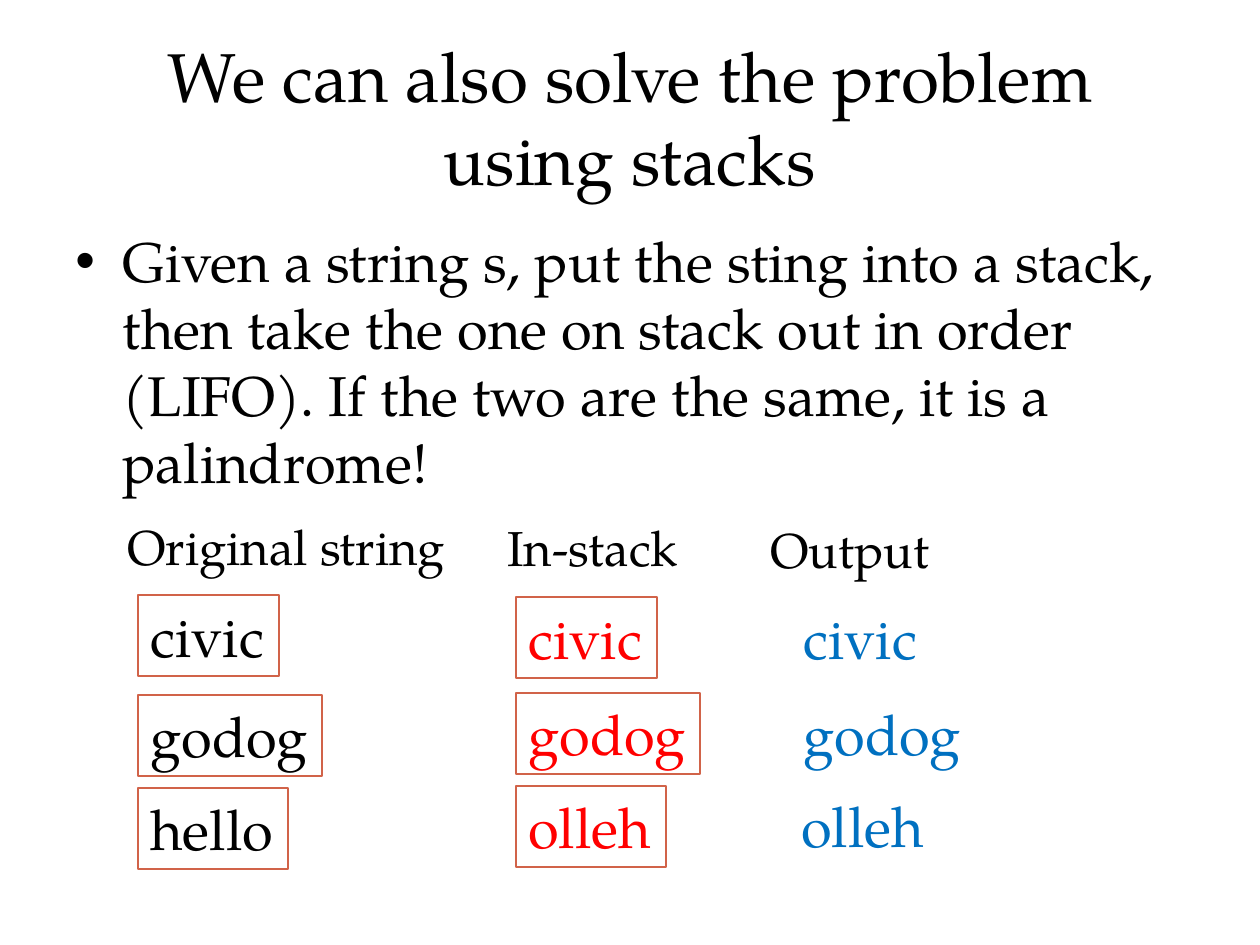
import pptx
import pptx.util
import pptx.dml.color
import pptx.enum.shapes
import pptx.enum.text
import pptx.oxml
import pptx.oxml.ns

RGB = pptx.dml.color.RGBColor
BLACK = RGB(0x00, 0x00, 0x00)
RED = RGB(0xFF, 0x00, 0x00)
BLUE = RGB(0x00, 0x70, 0xC0)
RUST = RGB(0xD1, 0x63, 0x49)
FONT = "TeX Gyre Pagella"
SCALE = 914400 / 126
ALIGN = pptx.enum.text.PP_ALIGN
ANCHOR = pptx.enum.text.MSO_ANCHOR
FIT = pptx.enum.text.MSO_AUTO_SIZE

HEADS = [("Original string", 115, 510, 348), ("In-stack", 495, 511, 199),
         ("Output", 758, 513, 186)]
WORDS = [
    (141, [("civic", 138, 595), ("civic", 516, 597), ("civic", 791, 597)]),
    (184, [("godog", 138, 695), ("godog", 516, 693), ("godog", 791, 693)]),
    (150, [("hello", 138, 788), ("olleh", 516, 786), ("olleh", 789, 785)]),
]
LOOKS = [(BLACK, RUST), (RED, RUST), (BLUE, None)]


def px(count):
    """Turn pixels into EMU."""
    return pptx.util.Emu(round(count * SCALE))


def write(shape, text, size=32, color=BLACK, align=ALIGN.LEFT,
          anchor=ANCHOR.TOP, wrap=True, fit=FIT.NONE):
    """Put one formatted paragraph into a shape and return it."""
    frame = shape.text_frame
    frame.word_wrap = wrap
    frame.auto_size = fit
    frame.vertical_anchor = anchor
    para = frame.paragraphs[0]
    para.alignment = align
    run = para.add_run()
    run.text = text
    run.font.name = FONT
    run.font.size = pptx.util.Pt(size)
    run.font.color.rgb = color
    return para


def title(slide, text):
    """Place and fill the title."""
    shape = slide.shapes.title
    shape.left, shape.top = px(63), px(38)
    shape.width, shape.height = px(1134), px(157)
    write(shape, text, size=39.6, align=ALIGN.CENTER, anchor=ANCHOR.MIDDLE)


def bullet(slide, text):
    """Add the bulleted body text."""
    box = slide.shapes.add_textbox(px(63), px(220), px(1134), px(290))
    para = write(box, text)
    para.space_before = pptx.util.Pt(6.4)
    props = para._p.get_or_add_pPr()
    props.set("marL", str(px(47)))
    props.set("indent", str(px(-47)))
    for tag, key, value in (("a:buFont", "typeface", "Arial"),
                            ("a:buChar", "char", "•")):
        item = pptx.oxml.xmlchemy.OxmlElement(tag)
        item.set(key, value)
        props.append(item)


def label(slide, text, left, top, width, height, line=None, **look):
    """Add a label, framed when a line colour is given."""
    place = px(left), px(top), px(width), px(height)
    if line is None:
        shape = slide.shapes.add_textbox(*place)
    else:
        kind = pptx.enum.shapes.MSO_SHAPE.RECTANGLE
        shape = slide.shapes.add_shape(kind, *place)
        shape.shadow.inherit = False
        shape.fill.background()
        shape.line.color.rgb = line
        shape.line.width = pptx.util.Pt(0.75)
    write(shape, text, wrap=False, fit=FIT.SHAPE_TO_FIT_TEXT, **look)


def main():
    """Build the slide and save it."""
    deck = pptx.Presentation()
    deck.slide_width, deck.slide_height = px(1260), px(945)
    slide = deck.slides.add_slide(deck.slide_layouts[5])
    title(slide, "We can also solve the problem using stacks")
    bullet(slide, "Given a string s, put the sting into a stack, then take "
                  "the one on stack out in order (LIFO). If the two are the "
                  "same, it is a palindrome!")
    for text, left, top, width in HEADS:
        label(slide, text, left, top, width, 72, size=28)
    for width, row in WORDS:
        for (text, left, top), (color, line) in zip(row, LOOKS):
            label(slide, text, left, top, width, 81, line=line, color=color)
    deck.save("out.pptx")


if __name__ == "__main__":
    main()
